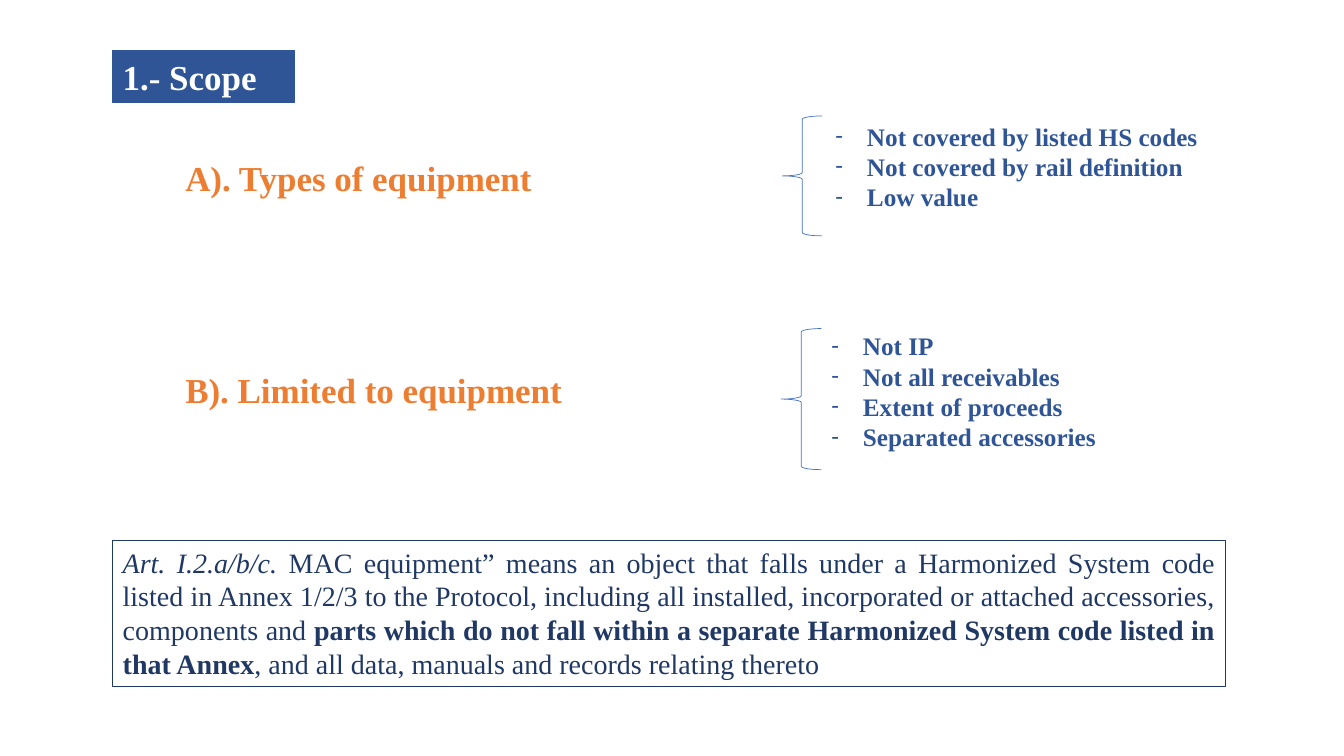
from lxml import etree
from pptx import Presentation
from pptx.dml.color import RGBColor
from pptx.enum.shapes import MSO_SHAPE
from pptx.enum.text import MSO_ANCHOR, MSO_AUTO_SIZE, PP_ALIGN
from pptx.oxml.ns import qn
from pptx.util import Pt

RECTANGLE = MSO_SHAPE.RECTANGLE
LEFT_BRACE = MSO_SHAPE.LEFT_BRACE
TOP = MSO_ANCHOR.TOP
FIT_SHAPE = MSO_AUTO_SIZE.SHAPE_TO_FIT_TEXT
LEFT = PP_ALIGN.LEFT
JUSTIFY = PP_ALIGN.JUSTIFY

FONT = "Times New Roman"
COLORS = {
    "blue": "2F5597",
    "navy": "203864",
    "orange": "ED7D31",
    "brace": "4472C4",
    "white": "FFFFFF",
}
BULLET_INDENT = 22.5
BRACE_WIDTH = 28.8
HEADING_GAP = 122


def color(name):
    return RGBColor.from_string(COLORS[name])


def set_font(paragraph, size, color_name, bold=None):
    font = paragraph.font
    font.name = FONT
    font.size = Pt(size)
    font.color.rgb = color(color_name)
    font.bold = bold


def prepare_frame(shape):
    frame = shape.text_frame
    frame.word_wrap = True
    frame.auto_size = FIT_SHAPE
    frame.vertical_anchor = TOP
    return frame


def add_outline(slide, kind, box, line, width, fill=None):
    shape = slide.shapes.add_shape(kind, *map(Pt, box))
    shape.shadow.inherit = False
    if fill:
        shape.fill.solid()
        shape.fill.fore_color.rgb = color(fill)
    else:
        shape.fill.background()
    shape.line.color.rgb = color(line)
    shape.line.width = Pt(width)
    return shape


def add_dash(paragraph):
    properties = paragraph._p.get_or_add_pPr()
    properties.set("marL", str(Pt(BULLET_INDENT)))
    properties.set("indent", str(-Pt(BULLET_INDENT)))
    etree.SubElement(properties, qn("a:buFont")).set("typeface", "Calibri")
    etree.SubElement(properties, qn("a:buChar")).set("char", "-")


def add_title(slide, box, text):
    title = add_outline(slide, RECTANGLE, box, "blue", 0.75, "blue")
    paragraph = prepare_frame(title).paragraphs[0]
    paragraph.text = text
    paragraph.alignment = LEFT
    set_font(paragraph, 25, "white", True)


def add_headings(slide, box, headings):
    frame = prepare_frame(slide.shapes.add_textbox(*map(Pt, box)))
    frame.text = "\n".join(headings)
    for paragraph in frame.paragraphs:
        set_font(paragraph, 25, "orange", True)
    for paragraph in frame.paragraphs[1:]:
        paragraph.space_before = Pt(HEADING_GAP)


def add_exclusions(slide, box, list_offset, list_height, items):
    left, top, width, height = box
    add_outline(slide, LEFT_BRACE, (left, top, BRACE_WIDTH, height), "brace", 0.5)
    list_left, list_top = left + list_offset[0], top + list_offset[1]
    list_box = (list_left, list_top, left + width - list_left, list_height)
    frame = prepare_frame(slide.shapes.add_textbox(*map(Pt, list_box)))
    frame.text = "\n".join(items)
    for paragraph in frame.paragraphs:
        add_dash(paragraph)
        set_font(paragraph, 18, "blue", True)


def add_article(slide, box, passages):
    article = add_outline(slide, RECTANGLE, box, "navy", 0.75)
    paragraph = prepare_frame(article).paragraphs[0]
    paragraph.alignment = JUSTIFY
    set_font(paragraph, 20, "navy")
    for text, bold, italic in passages:
        run = paragraph.add_run()
        run.text = text
        run.font.bold = bold
        run.font.italic = italic


def main():
    presentation = Presentation()
    presentation.slide_width = Pt(960)
    presentation.slide_height = Pt(540)
    slide = presentation.slides.add_slide(presentation.slide_layouts[6])

    add_title(slide, (80.6, 36, 129.6, 37.4), "1.- Scope")
    add_headings(
        slide,
        (125.3, 108, 432, 219.6),
        ["A). Types of equipment", "B). Limited to equipment"],
    )
    add_exclusions(
        slide,
        (558.7, 82.8, 365.8, 85.7),
        (31, 0),
        72.7,
        [
            "Not covered by listed HS codes",
            "Not covered by rail definition",
            "Low value",
        ],
    )
    add_exclusions(
        slide,
        (558, 234.7, 363.6, 100.8),
        (28.8, -2.1),
        94.3,
        [
            "Not IP",
            "Not all receivables",
            "Extent of proceeds",
            "Separated accessories",
        ],
    )
    add_article(
        slide,
        (80.6, 385.9, 794.9, 104.4),
        [
            ("Art. I.2.a/b/c. ", False, True),
            (
                "MAC equipment” means an object that falls under a Harmonized "
                "System code listed in Annex 1/2/3 to the Protocol, including all "
                "installed, incorporated or attached accessories, components and ",
                False,
                False,
            ),
            (
                "parts which do not fall within a separate Harmonized System "
                "code listed in that Annex",
                True,
                False,
            ),
            (", and all data, manuals and records relating thereto", False, False),
        ],
    )
    presentation.save("out.pptx")


if __name__ == "__main__":
    main()
